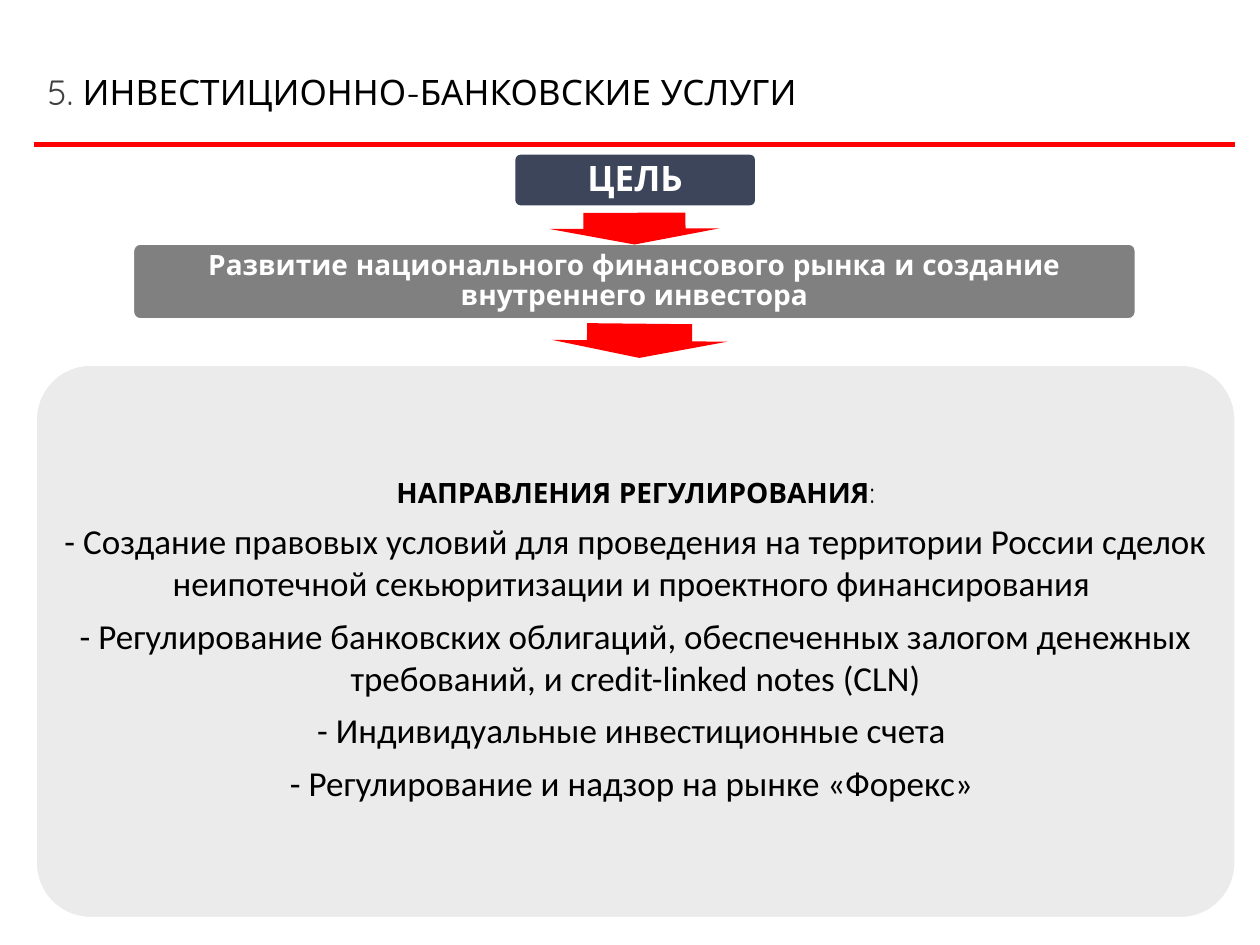
"""Build the slide on investment banking services: goal, purpose and regulation areas."""
from lxml import etree
from pptx import Presentation
from pptx import util as u
from pptx.dml.color import RGBColor
from pptx.enum import shapes, text
from pptx.oxml.ns import qn

COLORS = {"red": "FF0000", "navy": "3C4559", "grey": "808080", "pale": "D9D9D9",
          "white": "FFFFFF", "black": "000000", "number": "404040"}
HEAD, BODY = "Quicksand", "Calibri"
TITLE = [("5. ", "number"), ("ИНВЕСТИЦИОННО-БАНКОВСКИЕ УСЛУГИ", "black")]
GOAL = "ЦЕЛЬ"
PURPOSE = "Развитие национального финансового рынка и создание внутреннего инвестора"
AREAS_HEADING = [("НАПРАВЛЕНИЯ РЕГУЛИРОВАНИЯ", True), (":", False)]
AREAS = [
    "- Создание правовых условий для проведения на территории России сделок "
    "неипотечной секьюритизации и проектного финансирования ",
    "- Регулирование банковских облигаций, обеспеченных залогом денежных "
    "требований, и credit-linked notes (CLN)",
    "- Индивидуальные инвестиционные счета ",
    "- Регулирование и надзор на рынке «Форекс» ",
]
PANELS = {
    "goal": (10.39, 3.12, 4.83, 1.02, "navy", None),
    "purpose": (2.67, 4.9, 20.24, 1.55, "grey", "white"),
    "areas": (0.71, 7.34, 24.21, 11.18, "pale", "white"),
}
ARROWS = [(12.79, 4.61, 0.64, 3.43, 89.8), (12.89, 6.87, 0.69, 3.53, 90.6)]


def rgb(name):
    return RGBColor.from_string(COLORS[name])


def add_solid(page, kind, place, fill, line=None):
    shape = page.shapes.add_shape(kind, *map(u.Cm, place))
    shape.shadow.inherit = False
    shape.fill.solid()
    shape.fill.fore_color.rgb = rgb(fill)
    if line:
        shape.line.color.rgb = rgb(line)
        shape.line.width = u.Pt(2)
    else:
        shape.line.fill.background()
    return shape


def add_panel(page, left, top, width, height, fill, line):
    panel = add_solid(page, shapes.MSO_SHAPE.ROUNDED_RECTANGLE,
                      (left, top, width, height), fill, line)
    panel.adjustments[0] = 0.1
    frame = panel.text_frame
    frame.word_wrap = True
    frame.vertical_anchor = text.MSO_ANCHOR.MIDDLE
    frame.margin_left = frame.margin_right = u.Cm(0.1)
    frame.margin_top = frame.margin_bottom = u.Cm(0.1)
    return panel


def style(para, font, size, color=None, bold=None, spacing=None, after=None):
    para.font.name, para.font.size, para.font.bold = font, u.Pt(size), bold
    if color:
        para.font.color.rgb = rgb(color)
    if spacing:
        para.line_spacing = spacing
    if after:
        para.space_after = u.Pt(after)


def add_title(page):
    box = page.shapes.add_textbox(*map(u.Cm, (0.71, 0.76, 23.42, 2.16)))
    box.text_frame.word_wrap = True
    box.text_frame.vertical_anchor = text.MSO_ANCHOR.MIDDLE
    para = box.text_frame.paragraphs[0]
    style(para, HEAD, 20)
    for words, color in TITLE:
        span = para.add_run()
        span.text = words
        span.font.color.rgb = rgb(color)


def add_rule(page):
    rule = page.shapes.add_connector(shapes.MSO_CONNECTOR.STRAIGHT,
                                     *map(u.Cm, (0.69, 2.92, 24.89, 2.92)))
    rule.line.color.rgb = rgb("red")
    rule.line.width = u.Pt(2.75)
    etree.SubElement(rule.line._get_or_add_ln().getparent(), qn("a:effectLst"))


def add_arrow(page, center_x, center_y, length, breadth, angle):
    place = (center_x - length / 2, center_y - breadth / 2, length, breadth)
    arrow = add_solid(page, shapes.MSO_SHAPE.RIGHT_ARROW, place, "red")
    arrow.adjustments[0], arrow.adjustments[1] = 0.6, 0.5
    arrow.rotation = angle


def fill_areas(panel):
    fill = panel.fill._xPr.find(qn("a:solidFill"))
    etree.SubElement(fill[0], qn("a:alpha"), val="50000")
    frame = panel.text_frame
    heading = frame.paragraphs[0]
    heading.alignment = text.PP_ALIGN.CENTER
    style(heading, HEAD, 16, "black", spacing=0.9, after=5.6)
    for words, bold in AREAS_HEADING:
        span = heading.add_run()
        span.text, span.font.bold = words, bold
    for words in AREAS:
        para = frame.add_paragraph()
        para.text = words
        para.alignment = text.PP_ALIGN.CENTER
        style(para, BODY, 20, "black", after=6)


def main():
    deck = Presentation()
    deck.slide_width, deck.slide_height = u.Cm(25.4), u.Cm(19.05)
    page = deck.slides.add_slide(deck.slide_layouts[6])
    add_rule(page)
    panels = {name: add_panel(page, *place) for name, place in PANELS.items()}
    for name, words, size in (("goal", GOAL, 20), ("purpose", PURPOSE, 16)):
        para = panels[name].text_frame.paragraphs[0]
        para.text = words
        para.alignment = text.PP_ALIGN.CENTER
        style(para, HEAD, size, "white", True, 0.9)
    fill_areas(panels["areas"])
    for arrow in ARROWS:
        add_arrow(page, *arrow)
    add_title(page)
    deck.save("out.pptx")


if __name__ == "__main__":
    main()
